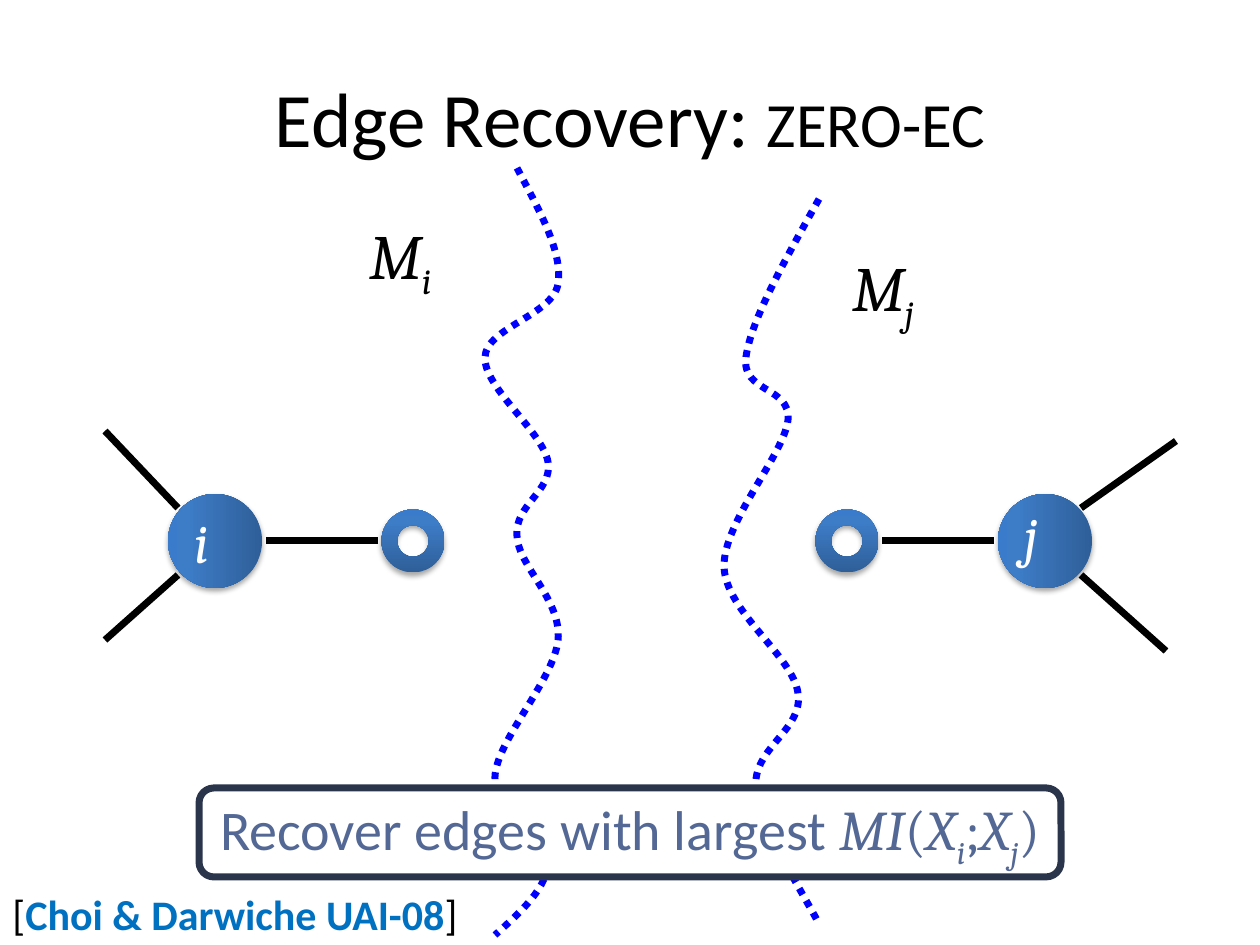
"""Build the Edge Recovery: ZERO-EC slide."""
from copy import deepcopy
from dataclasses import dataclass

from lxml import etree
from pptx import Presentation
from pptx.dml.color import RGBColor
from pptx.enum.dml import MSO_LINE
from pptx.enum.shapes import MSO_CONNECTOR, MSO_SHAPE
from pptx.enum.text import MSO_ANCHOR, MSO_AUTO_SIZE, PP_ALIGN
from pptx.oxml.ns import qn
from pptx.util import Pt

DOT = MSO_LINE.ROUND_DOT
STRAIGHT = MSO_CONNECTOR.STRAIGHT
ELLIPSE, DONUT, ROUNDED = MSO_SHAPE.OVAL, MSO_SHAPE.DONUT, MSO_SHAPE.ROUNDED_RECTANGLE
TOP, MIDDLE, BOTTOM = MSO_ANCHOR.TOP, MSO_ANCHOR.MIDDLE, MSO_ANCHOR.BOTTOM
LEFT, CENTER = PP_ALIGN.LEFT, PP_ALIGN.CENTER
GROW = MSO_AUTO_SIZE.SHAPE_TO_FIT_TEXT
PX = 914400 / 126


@dataclass(frozen=True)
class Theme:
    sans: str = "Calibri"
    math: str = "Cambria"
    black: str = "000000"
    white: str = "FFFFFF"
    curve: str = "0000FF"
    border: str = "2A354C"
    claim: str = "536895"
    cite: str = "0070C0"
    gradient: tuple = ((0, "2F5F99"), (0.8, "3D7CC7"), (1, "3A7CCB"))
    title: int = 44
    label: int = 36
    body: int = 32
    small: int = 24
    stroke: int = 4


T = Theme()


def run(text, size, color=T.black, font=T.sans, italic=False, bold=False, sub=False):
    return text, size, color, font, italic, bold, sub


def symbol(text, size, color=T.black, italic=True, sub=False):
    return run(text, size, color, T.math, italic, sub=sub)


TITLE = [run("Edge Recovery: ", T.title), run("ZERO-EC", T.label)]
CLAIM = [run("Recover edges with largest ", T.body, T.claim)] + [
    symbol(text, T.body, T.claim, italic, sub)
    for text, italic, sub in [
        ("MI", True, False), ("(", False, False), ("X", True, False), ("i", True, True),
        (";", False, False), ("X", True, False), ("j", True, True), (")", False, False)]]
CITATION = [run("[", T.small), run("Choi & Darwiche UAI-08", T.small, T.cite, bold=True),
            run("]", T.small)]
NODES = [("i", 215, MIDDLE), ("j", 1045, BOTTOM)]
RINGS = [413, 847]
AXIS_Y, NODE_SIZE, RING_SIZE = 541, 94, 63
EDGES = [(378, 541, 266, 541), (994, 541, 882, 541), (178, 508, 105, 431),
         (178, 575, 105, 640), (1081, 508, 1176, 441), (1081, 575, 1166, 651)]
CURVES = [
    [(819, 199), (785, 260), (751, 320), (746, 357), (741, 393), (791, 386), (788, 420),
     (784, 455), (723, 522), (724, 567), (726, 612), (793, 656), (798, 693),
     (804, 730), (752, 748), (756, 788), (760, 827), (810, 905), (819, 924)],
    [(517, 168), (539, 210), (563, 252), (558, 284), (553, 315), (486, 328), (485, 357),
     (483, 387), (543, 432), (548, 462), (553, 491), (514, 505), (517, 536),
     (518, 566), (562, 600), (558, 640), (554, 680), (496, 741), (495, 777),
     (494, 814), (548, 834), (548, 861), (548, 887), (522, 911), (495, 935)],
]
MODELS = [("i", 357, 210), ("j", 840, 242)]


def px(*values):
    return [round(v * PX) for v in values]


def rgb(color):
    return RGBColor.from_string(color)


def write(s, runs, align=LEFT, anchor=TOP, wrap=False, grow=True):
    tf = s.text_frame
    tf.word_wrap = wrap
    tf.vertical_anchor = anchor
    if grow:
        tf.auto_size = GROW
    p = tf.paragraphs[0]
    p.alignment = align
    for text, size, color, font, italic, bold, sub in runs:
        r = p.add_run()
        r.text = text
        r.font.size, r.font.name = Pt(size), font
        r.font.italic, r.font.bold = italic, bold
        r.font.color.rgb = rgb(color)
        if sub:
            r.font._element.set("baseline", "-25000")


def stroke(s, color):
    s.line.color.rgb = rgb(color)
    s.line.width = Pt(T.stroke)


def add_text(sp, box, runs, **layout):
    write(sp.add_textbox(*px(*box)), runs, **layout)


def add_disc(sp, kind, x, size):
    s = sp.add_shape(kind, *px(x - size / 2, AXIS_Y - size / 2, size, size))
    s.line.fill.background()
    s.fill.gradient()
    s.fill.gradient_angle = 90
    stops = s._element.spPr.find(".//" + qn("a:gsLst"))
    stops.append(deepcopy(stops[-1]))
    for stop, (position, color) in zip(s.fill.gradient_stops, T.gradient):
        stop.position = position
        stop.color.rgb = rgb(color)
    s.shadow.inherit = False
    effects = s._element.spPr.find(qn("a:effectLst"))
    shadow = etree.SubElement(effects, qn("a:outerShdw"), blurRad="40000", dist="23000",
                              dir="5400000", rotWithShape="0")
    color = etree.SubElement(shadow, qn("a:srgbClr"), val=T.black)
    etree.SubElement(color, qn("a:alpha"), val="35000")
    return s


def add_node(sp, name, x, anchor):
    s = add_disc(sp, ELLIPSE, x, NODE_SIZE)
    s.rotation = 270
    s._element.spPr.find(qn("a:xfrm")).set("flipH", "1")
    write(s, [symbol(name, T.body, T.white)], CENTER, anchor, grow=False)
    s.text_frame._txBody.find(qn("a:bodyPr")).set("vert", "eaVert")


def add_edge(sp, ends):
    s = sp.add_connector(STRAIGHT, *px(*ends))
    stroke(s, T.black)
    etree.SubElement(s._element.spPr, qn("a:effectLst"))


def add_curve(sp, points):
    builder = sp.build_freeform(*points[0], scale=PX)
    builder.add_line_segments(points[1:], close=False)
    s = builder.convert_to_shape()
    s.fill.background()
    s.shadow.inherit = False
    stroke(s, T.curve)
    s.line.dash_style = DOT
    outline = s._element.spPr.find(".//" + qn("a:path"))
    steps = outline.findall(qn("a:lnTo"))
    for i in range(0, len(steps), 3):
        bezier = etree.SubElement(outline, qn("a:cubicBezTo"))
        for step in steps[i:i + 3]:
            bezier.append(step[0])
            outline.remove(step)


def add_claim(sp):
    s = sp.add_shape(ROUNDED, *px(199, 788, 862, 89))
    s.fill.solid()
    s.fill.fore_color.rgb = rgb(T.white)
    s.shadow.inherit = False
    stroke(s, T.border)
    write(s, CLAIM, CENTER, MIDDLE)


def main():
    prs = Presentation()
    prs.slide_width, prs.slide_height = px(1260, 945)
    sp = prs.slides.add_slide(prs.slide_layouts[6]).shapes
    add_text(sp, (63, 38, 1134, 157), TITLE, align=CENTER, anchor=MIDDLE, wrap=True, grow=False)
    for node in NODES:
        add_node(sp, *node)
    for x in RINGS:
        add_disc(sp, DONUT, x, RING_SIZE)
    for ends in EDGES:
        add_edge(sp, ends)
    for points in CURVES:
        add_curve(sp, points)
    add_claim(sp)
    for name, x, y in MODELS:
        add_text(sp, (x, y, 87, 89), [symbol("M", T.label), symbol(name, T.label, sub=True)])
    add_text(sp, (0, 882, 474, 63), CITATION)
    prs.save("out.pptx")


if __name__ == "__main__":
    main()
